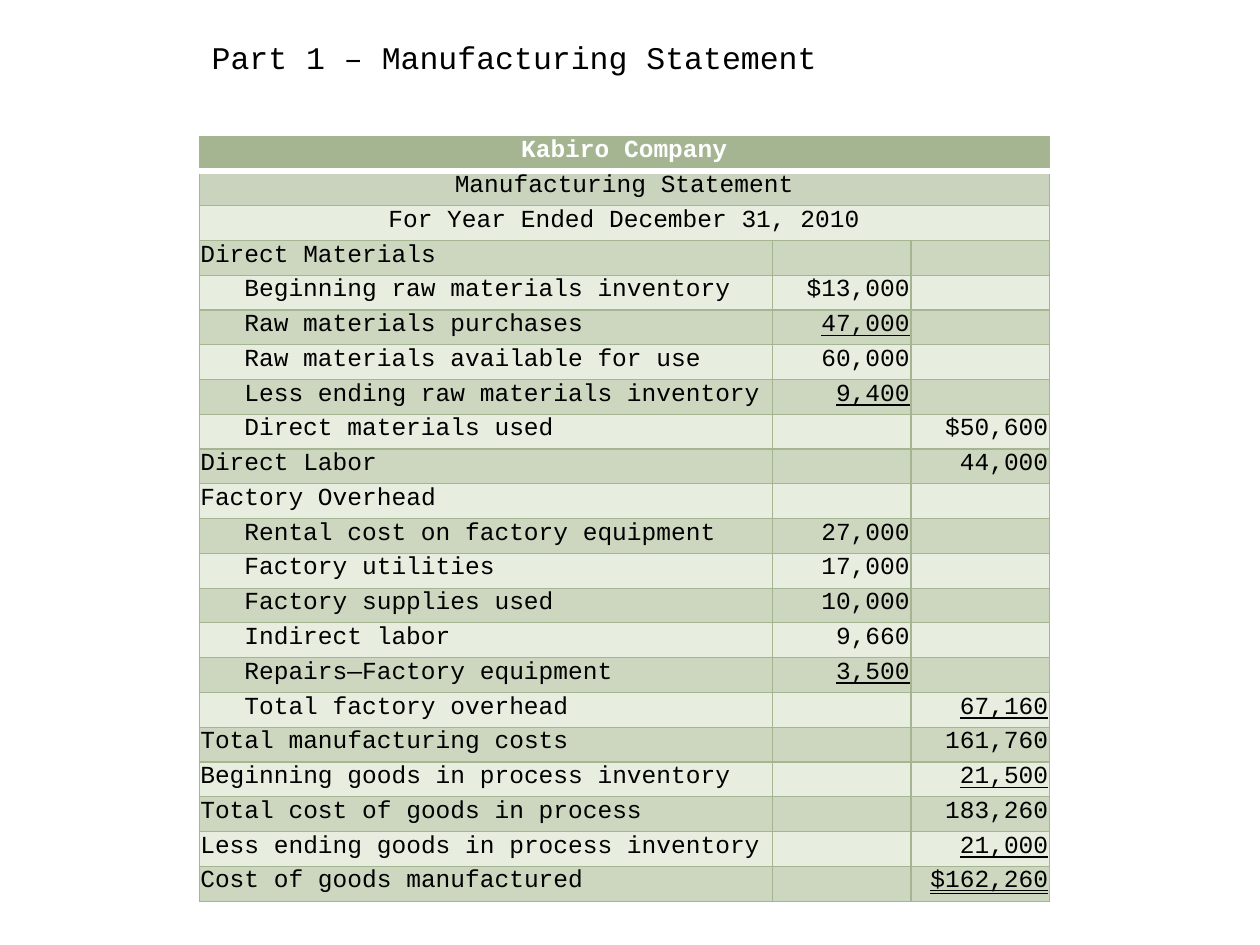
import dataclasses
import lxml.etree
import pptx
import pptx.dml.color
import pptx.enum.text
import pptx.oxml.ns
import pptx.table
import pptx.text.text
import pptx.util

Inches = pptx.util.Inches
Align = pptx.enum.text.PP_ALIGN
Under = pptx.enum.text.MSO_UNDERLINE

COLORS = {
    "black": "000000",
    "white": "FFFFFF",
    "green": "A5B592",
    "sub": "C9D3BE",
    "dark": "CDD7C0",
    "light": "E8EEDF",
}
FONT = "Courier New"
LEFT, WIDTH = 1.58, 6.75
TOP, HEIGHT = 1.08, 6.08
COLS = (4.55, 1.1, 1.1)
INDENT = 0.35


@dataclasses.dataclass
class Line:
    label: str
    col: int = 0
    value: str = ""
    indent: bool = False
    under: Under = Under.NONE


HEADS = ("Kabiro Company", "Manufacturing Statement", "For Year Ended December 31, 2010")
ONE, TWO = Under.SINGLE_LINE, Under.DOUBLE_LINE
LINES = (
    Line("Direct Materials"),
    Line("Beginning raw materials inventory", 1, "$13,000", True),
    Line("Raw materials purchases", 1, "47,000", True, ONE),
    Line("Raw materials available for use", 1, "60,000", True),
    Line("Less ending raw materials inventory", 1, "9,400", True, ONE),
    Line("Direct materials used", 2, "$50,600", True),
    Line("Direct Labor", 2, "44,000"),
    Line("Factory Overhead"),
    Line("Rental cost on factory equipment", 1, "27,000", True),
    Line("Factory utilities", 1, "17,000", True),
    Line("Factory supplies used", 1, "10,000", True),
    Line("Indirect labor", 1, "9,660", True),
    Line("Repairs—Factory equipment", 1, "3,500", True, ONE),
    Line("Total factory overhead", 2, "67,160", True, ONE),
    Line("Total manufacturing costs", 2, "161,760"),
    Line("Beginning goods in process inventory", 2, "21,500", False, ONE),
    Line("Total cost of goods in process", 2, "183,260"),
    Line("Less ending goods in process inventory", 2, "21,000", False, ONE),
    Line("Cost of goods manufactured", 2, "$162,260", False, TWO),
)


def paint(name: str) -> pptx.dml.color.RGBColor:
    return pptx.dml.color.RGBColor.from_string(COLORS[name])


def style(par: pptx.text.text._Paragraph, size: int, color: str, bold: bool = False) -> None:
    par.font.name = FONT
    par.font.size = pptx.util.Pt(size)
    par.font.bold = bold
    par.font.color.rgb = paint(color)


def border(cell: pptx.table._Cell, side: str, color: str, width: float) -> None:
    qn = pptx.oxml.ns.qn
    props = cell._tc.get_or_add_tcPr()
    line = lxml.etree.SubElement(props, qn(f"a:ln{side}"), w=str(pptx.util.Pt(width)))
    fill = lxml.etree.SubElement(line, qn("a:solidFill"))
    lxml.etree.SubElement(fill, qn("a:srgbClr"), val=COLORS[color])


def format_cell(cell: pptx.table._Cell, row: int) -> None:
    cell.margin_left = cell.margin_right = cell.margin_top = Inches(0.01)
    cell.margin_bottom = 0
    for side in "LRTB":
        thick = (row, side) in ((0, "B"), (1, "T"))
        border(cell, side, "white" if thick else "green", 4.33 if thick else 0.75)
    cell.fill.solid()
    band = "dark" if row % 2 else "light"
    cell.fill.fore_color.rgb = paint({0: "green", 1: "sub"}.get(row, band))
    par = cell.text_frame.paragraphs[0]
    style(par, 14, "black" if row else "white", row == 0)
    if not cell.text:
        lxml.etree.SubElement(par._p, pptx.oxml.ns.qn("a:endParaRPr"), sz="1400")


def add_title(slide: pptx.slide.Slide) -> None:
    title = slide.shapes.title
    title.left, title.top = Inches(LEFT), Inches(0.25)
    title.width, title.height = Inches(WIDTH), Inches(0.4)
    frame = title.text_frame
    frame.text = "Part 1 – Manufacturing Statement"
    frame.word_wrap = True
    frame.auto_size = pptx.enum.text.MSO_AUTO_SIZE.SHAPE_TO_FIT_TEXT
    frame.vertical_anchor = pptx.enum.text.MSO_ANCHOR.TOP
    frame.paragraphs[0].alignment = Align.LEFT
    style(frame.paragraphs[0], 18, "black")


def add_report(slide: pptx.slide.Slide) -> None:
    count = len(HEADS) + len(LINES)
    table = slide.shapes.add_table(
        count, len(COLS), Inches(LEFT), Inches(TOP), Inches(WIDTH), Inches(HEIGHT)
    ).table
    table.first_row = table.horz_banding = False
    for col, width in zip(table.columns, COLS):
        col.width = Inches(width)
    for row in table.rows:
        row.height = Inches(HEIGHT / count)

    for row, text in enumerate(HEADS):
        cell = table.cell(row, 0)
        cell.merge(table.cell(row, len(COLS) - 1))
        cell.text = text
        cell.text_frame.paragraphs[0].alignment = Align.CENTER

    for row, line in enumerate(LINES, len(HEADS)):
        label = table.cell(row, 0)
        label.text = line.label
        if line.indent:
            props = label.text_frame.paragraphs[0]._p.get_or_add_pPr()
            props.set("marL", str(Inches(INDENT)))
        if line.value:
            cell = table.cell(row, line.col)
            cell.text = line.value
            par = cell.text_frame.paragraphs[0]
            par.alignment = Align.RIGHT
            par.font.underline = line.under

    for row in range(count):
        for col in range(len(COLS)):
            format_cell(table.cell(row, col), row)


def main() -> None:
    deck = pptx.Presentation()
    deck.slide_width, deck.slide_height = Inches(10), Inches(7.5)
    slide = deck.slides.add_slide(deck.slide_layouts[5])
    add_title(slide)
    add_report(slide)
    deck.save("out.pptx")


if __name__ == "__main__":
    main()
